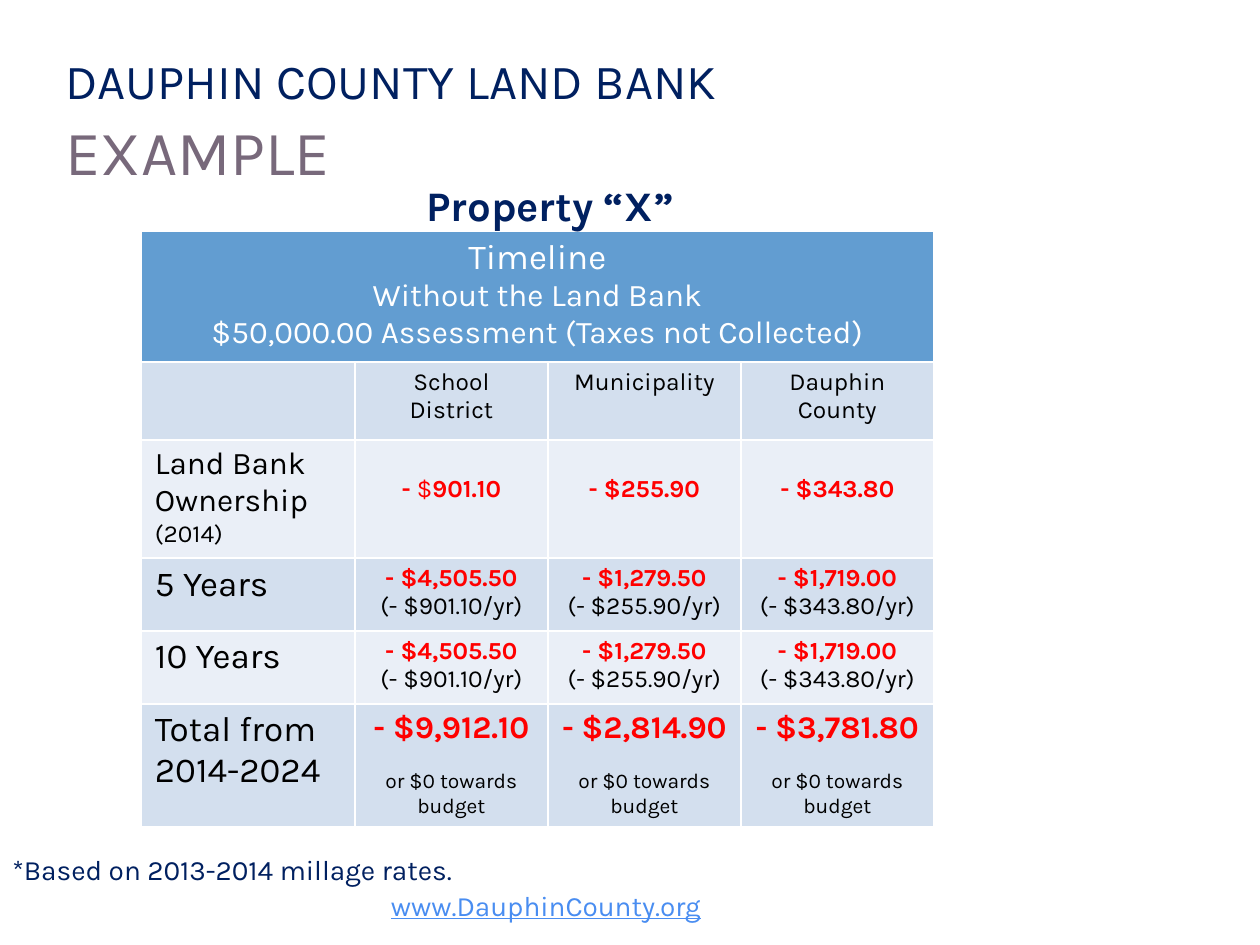
"""Builds the land bank example slide with its tax timeline table."""
from lxml import etree
from pptx import Presentation
from pptx import util as u
from pptx.dml.color import RGBColor
from pptx.enum import text
from pptx.oxml import ns

SCALE = 914400 / 126
FONT = "Karla"
COLORS = {
    "navy": "002060", "plum": "78697B", "link": "498DF1", "header": "629DD1",
    "band": "D3DFEE", "pale": "EAEFF7", "white": "FFFFFF", "black": "000000",
    "red": "FF0000",
}
LEFT, CENTER = text.PP_ALIGN.LEFT, text.PP_ALIGN.CENTER


def px(value):
    return u.Emu(round(value * SCALE))


def rgb(name):
    return RGBColor.from_string(COLORS[name])


class SlideBuilder:
    def __init__(self, slide):
        self.slide = slide

    def add_paragraphs(self, frame, paragraphs, align=LEFT, gap=0, spacing=None):
        for index, runs in enumerate(paragraphs):
            paragraph = frame.add_paragraph() if index else frame.paragraphs[0]
            paragraph.alignment = align
            if spacing:
                paragraph.line_spacing = spacing
            if index and gap:
                paragraph.space_before = u.Pt(gap)
            for words, size, color, bold in runs:
                run = paragraph.add_run()
                run.text = words
                run.font.name = FONT
                run.font.size = u.Pt(size)
                run.font.bold = bold
                run.font.color.rgb = rgb(color)

    def text(self, box, paragraphs, **style):
        shape = self.slide.shapes.add_textbox(*map(px, box))
        shape.text_frame.word_wrap = True
        self.add_paragraphs(shape.text_frame, paragraphs, **style)
        return shape

    def table(self, left, top, widths, heights):
        shape = self.slide.shapes.add_table(
            len(heights), len(widths), px(left), px(top), px(sum(widths)), px(sum(heights)))
        table = shape.table
        for column, width in zip(table.columns, widths):
            column.width = px(width)
        for row, height in zip(table.rows, heights):
            row.height = px(height)
        return table

    def cell(self, cell, fill, paragraphs=(), align=CENTER, gap=0, top=6):
        properties = cell._tc.get_or_add_tcPr()
        for side in ("lnL", "lnR", "lnT", "lnB"):
            line = etree.SubElement(properties, ns.qn(f"a:{side}"), w=str(u.Pt(1)))
            solid = etree.SubElement(line, ns.qn("a:solidFill"))
            etree.SubElement(solid, ns.qn("a:srgbClr"), val=COLORS["white"])
        cell.fill.solid()
        cell.fill.fore_color.rgb = rgb(fill)
        cell.margin_left = cell.margin_right = px(14)
        cell.margin_top, cell.margin_bottom = px(top), px(6)
        self.add_paragraphs(cell.text_frame, paragraphs, align, gap)


def line(words, size, color="black", bold=False):
    return [(words, size, color, bold)]


def fill_table(builder):
    table = builder.table(141, 231, [214, 193, 193, 193], [131, 78, 118, 73, 73, 123])
    table.cell(0, 0).merge(table.cell(0, 3))
    for column in range(4):
        builder.cell(table.cell(0, column), "header", [] if column else [
            line("Timeline", 20, "white"),
            line("Without the Land Bank", 18, "white"),
            line("$50,000.00 Assessment (Taxes not Collected)", 18, "white"),
        ])

    labels = [
        [],
        [line("Land Bank Ownership", 18), line("(2014)", 14)],
        [line("5 Years", 20)],
        [line("10 Years", 20)],
        [line("Total from 2014-2024", 20)],
    ]
    fills = ["band", "pale", "band", "pale", "band"]
    for row, (label, fill) in enumerate(zip(labels, fills), 1):
        builder.cell(table.cell(row, 0), fill, label, LEFT)

    first_year = [("- ", 14, "red", True), ("$", 14, "red", False), ("901.10", 14, "red", True)]
    taxes = [
        (["School District"], first_year, "901.10", "4,505.50", "9,912.10"),
        (["Municipality"], line("- $255.90", 14, "red", True), "255.90", "1,279.50", "2,814.90"),
        (["Dauphin", "County"], line("- $343.80", 14, "red", True), "343.80", "1,719.00", "3,781.80"),
    ]
    for column, (heading, ownership, yearly, five_years, total) in enumerate(taxes, 1):
        builder.cell(table.cell(1, column), "band", [line(words, 14) for words in heading])
        builder.cell(table.cell(2, column), "pale", [ownership], top=35)
        for row in (3, 4):
            builder.cell(table.cell(row, column), fills[row - 1], [
                line(f"- ${five_years}", 14, "red", True),
                line(f"(- ${yearly}/yr)", 14),
            ])
        builder.cell(table.cell(5, column), "band", [
            line(f"- ${total}", 18, "red", True),
            line("or $0 towards budget", 12),
        ], gap=13)


def main():
    presentation = Presentation()
    presentation.slide_width, presentation.slide_height = px(1260), px(945)
    builder = SlideBuilder(presentation.slides.add_slide(presentation.slide_layouts[6]))

    title = builder.text((53, 31, 1155, 160), [
        line("DAUPHIN COUNTY LAND BANK", 28, "navy"),
        line("EXAMPLE", 36, "plum"),
    ], gap=2)
    title.text_frame.margin_top = px(19)
    website = builder.text((0, 882, 1092, 47), [line("www.DauphinCounty.org", 16, "link")], align=CENTER)
    website.text_frame.paragraphs[0].runs[0].font.underline = True
    builder.text((0, 850, 1092, 53),
                 [line("*Based on 2013-2014 millage rates.", 16, "navy")], spacing=0.9)
    fill_table(builder)
    builder.text((4, 179, 1092, 53),
                 [line("Property “X”", 24, "navy", True)], align=CENTER, spacing=0.9)
    presentation.save("out.pptx")


if __name__ == "__main__":
    main()
